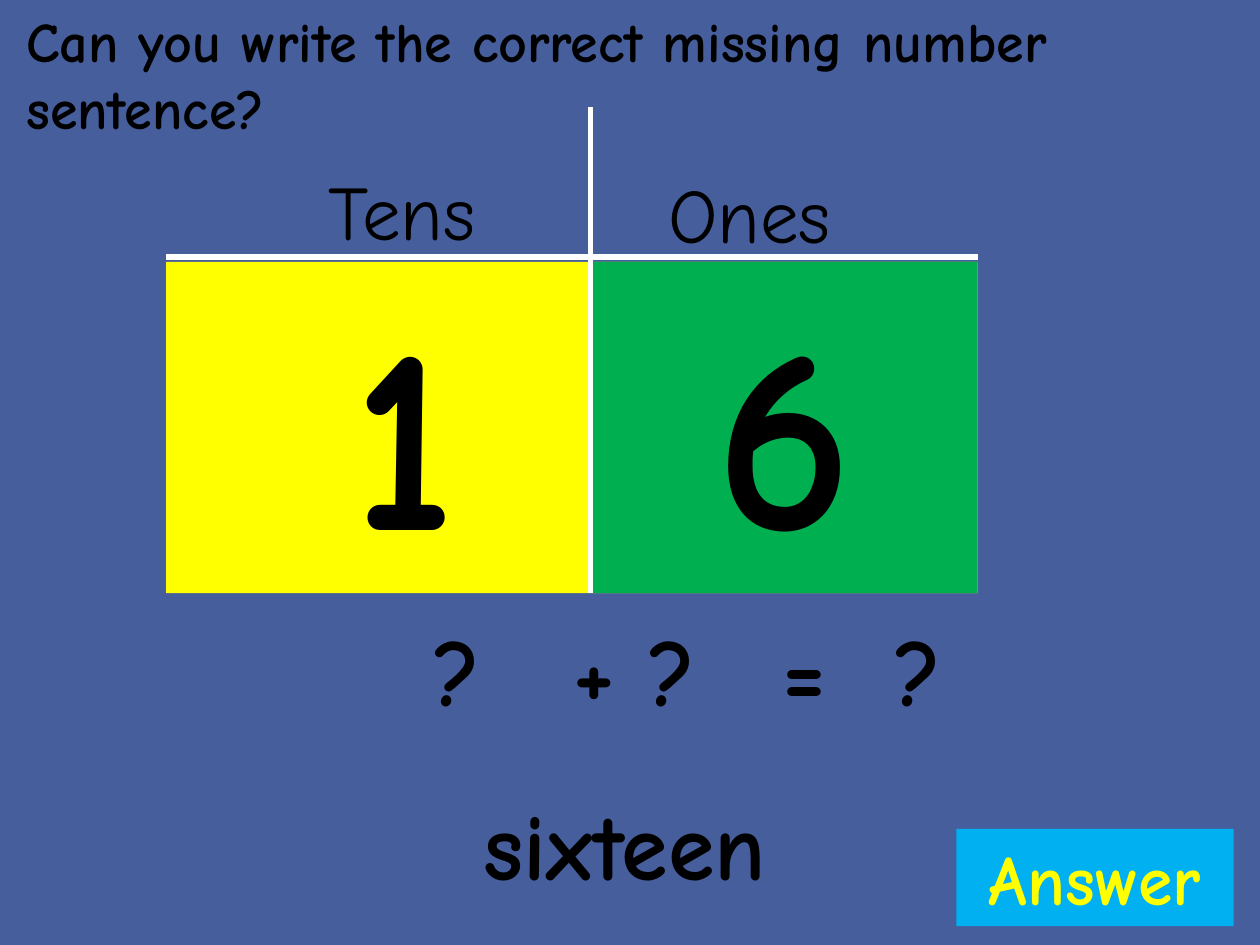
"""Build a place value slide asking for the number sentence of sixteen."""
from lxml.etree import SubElement
from pptx import Presentation
from pptx.dml.color import RGBColor
from pptx.enum.shapes import MSO_CONNECTOR, MSO_SHAPE
from pptx.enum.text import MSO_ANCHOR, PP_ALIGN
from pptx.oxml.ns import qn
from pptx.util import Cm, Pt

BLUE = RGBColor(0x46, 0x5E, 0x9C)
YELLOW = RGBColor(0xFF, 0xFF, 0x00)
GREEN = RGBColor(0x00, 0xB0, 0x50)
SKY = RGBColor(0x00, 0xB0, 0xF0)
WHITE = RGBColor(0xFF, 0xFF, 0xFF)
BLACK = RGBColor(0x00, 0x00, 0x00)


def write(box, text, size, bold=True, color=BLACK, align=PP_ALIGN.CENTER, anchor=MSO_ANCHOR.TOP):
    frame = box.text_frame
    frame.word_wrap = True
    frame.vertical_anchor = anchor
    frame.text = text
    paragraph = frame.paragraphs[0]
    paragraph.alignment = align
    paragraph.font.name = "Comic Neue"
    paragraph.font.size = Pt(size)
    paragraph.font.bold = bold
    paragraph.font.color.rgb = color


deck = Presentation()
deck.slide_width, deck.slide_height = Cm(25.4), Cm(19.05)
page = deck.slides.add_slide(deck.slide_layouts[5])
page.background.fill.solid()
page.background.fill.fore_color.rgb = BLUE

left, middle, right = Cm(3.35), Cm(11.91), Cm(19.71)
top, bottom = Cm(5.28), Cm(11.96)

title = page.shapes.title
title.left, title.top, title.width, title.height = Cm(5.59), Cm(2.64), Cm(5.03), Cm(3.18)
write(title, "Tens", 44, bold=False, anchor=MSO_ANCHOR.MIDDLE)
ones = page.shapes.add_textbox(Cm(12.6), Cm(2.69), Cm(5.03), Cm(3.18))
write(ones, "Ones", 44, bold=False, anchor=MSO_ANCHOR.MIDDLE)

blocks = []
for x, y, width, height, fill, text, size, color in (
    (left, top, right - left, bottom - top, YELLOW, "1", 150, BLACK),
    (middle, top, right - middle, bottom - top, GREEN, "6", 150, BLACK),
    (Cm(19.28), Cm(16.71), Cm(5.59), Cm(1.96), SKY, "Answer", 40, YELLOW),
):
    block = page.shapes.add_shape(MSO_SHAPE.RECTANGLE, x, y, width, height)
    block.shadow.inherit = False
    block.fill.solid()
    block.fill.fore_color.rgb = fill
    block.line.fill.background()
    write(block, text, size, color=color)
    blocks.append(block)
blocks[0].text_frame.margin_right = Cm(7)

for start_x, start_y, end_x, end_y in (
    (right, Cm(5.18), left, Cm(5.18)),
    (middle, Cm(2.16), middle, bottom),
):
    rule = page.shapes.add_connector(MSO_CONNECTOR.STRAIGHT, start_x, start_y, end_x, end_y)
    rule.line.color.rgb = WHITE
    rule.line.width = Pt(3)
    SubElement(rule._element.spPr, qn("a:effectLst"))

question = page.shapes.add_textbox(Cm(0.28), 0, Cm(23.83), Cm(3))
write(question, "Can you write the correct missing number sentence?", 32, align=PP_ALIGN.LEFT)

for index, (text, width) in enumerate((("?", 4.19), ("+ ?", 4.19), ("=  ?", 6.22))):
    term = page.shapes.add_textbox(Cm(7.11 + 3.58 * index), Cm(12.22), Cm(width), Cm(2.57))
    write(term, text, 54)

word = page.shapes.add_textbox(Cm(6.6), Cm(15.72), Cm(11.99), Cm(2.57))
write(word, "sixteen", 54)

deck.save("out.pptx")
